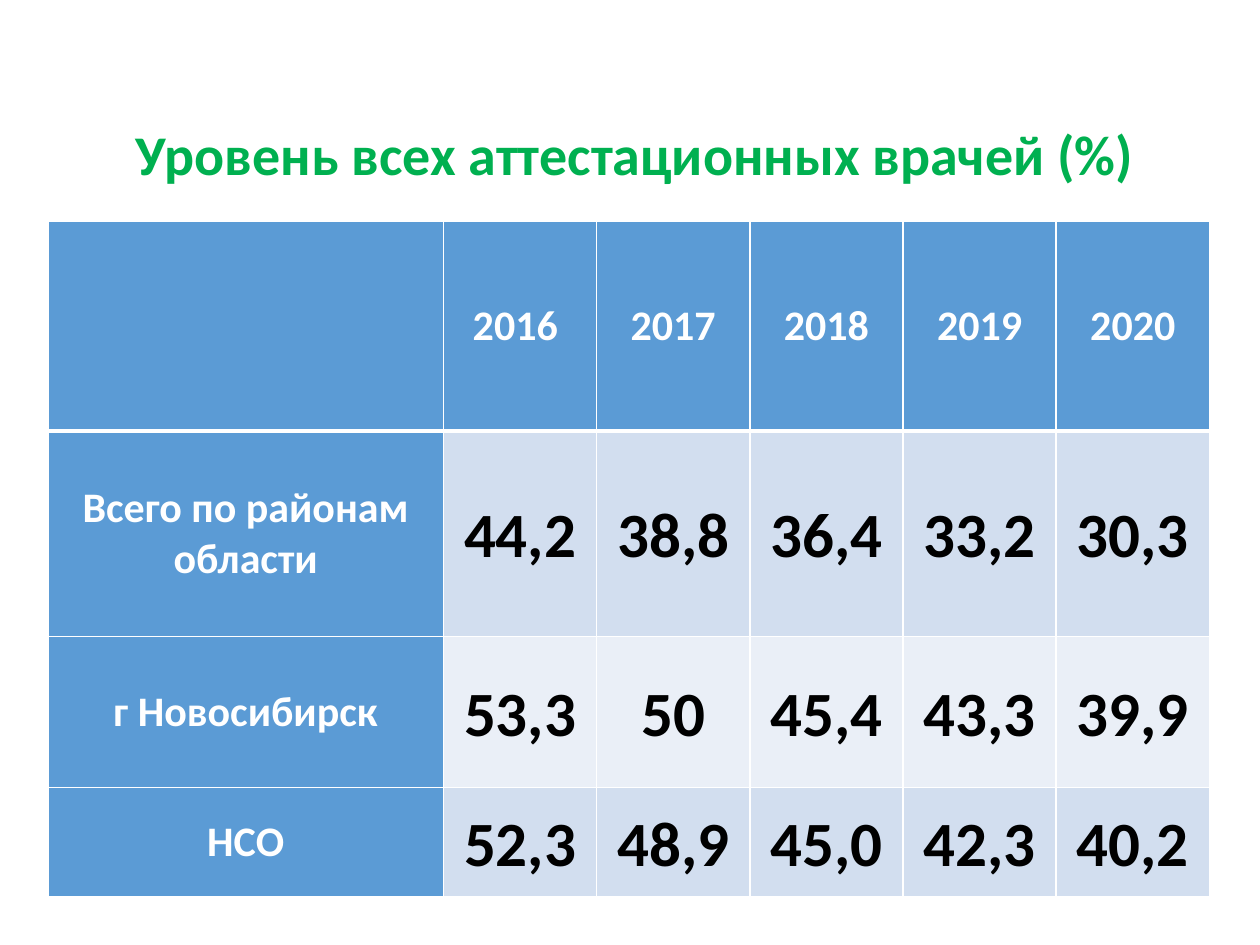
from lxml.etree import SubElement as Sub
from pptx import Presentation
from pptx.dml.color import RGBColor as RGB
from pptx.enum.text import MSO_ANCHOR as Anchor, MSO_AUTO_SIZE as Fit, PP_ALIGN as Align
from pptx.oxml.ns import qn
from pptx.util import Inches, Pt

HUES = {
    "green": "00B050", "blue": "5B9BD5", "white": "FFFFFF", "black": "000000",
    "band": "D2DEEF", "pale": "EAEFF7",
}
COLS, ROWS = 100, 75  # grid over the slide

YEARS = ["", "2016 ", "2017", "2018", "2019", "2020"]
RATES = [
    ["Всего по районам области", "44,2", "38,8", "36,4", "33,2", "30,3"],
    ["г Новосибирск", "53,3", "50", "45,4", "43,3", "39,9"],
    ["НСО", "52,3", "48,9", "45,0", "42,3", "40,2"],
]


def put(frame, text, size=24, hue="white", gap=None):
    """Write one bold, centred paragraph into a text frame."""
    para = frame.paragraphs[0]
    para.alignment = Align.CENTER
    para.line_spacing = gap
    run = para.add_run()
    run.text = text
    font = run.font
    font.name, font.size, font.bold = "Calibri", Pt(size), True
    font.color.rgb = RGB.from_string(HUES[hue])


class Deck:
    def __init__(self):
        self.show = Presentation()
        self.show.slide_width, self.show.slide_height = Inches(10), Inches(7.5)
        self.slide = self.show.slides.add_slide(self.show.slide_layouts[5])

    def wide(self, cols):
        return round(self.show.slide_width * cols / COLS)

    def high(self, rows):
        return round(self.show.slide_height * rows / ROWS)

    def title(self, text, x, y, w, h):
        box = self.slide.shapes.title
        box.left, box.top = self.wide(x), self.high(y)
        box.width, box.height = self.wide(w), self.high(h)
        frame = box.text_frame
        frame.word_wrap, frame.auto_size = True, Fit.NONE
        frame.vertical_anchor = Anchor.TOP
        put(frame, text, size=32, hue="green")

    def edge(self, cell, base):
        """Draw white borders; base is the width of the lower one."""
        props = cell._tc.get_or_add_tcPr()
        sides = {"lnL": 1, "lnR": 1, "lnT": 1, "lnB": base}
        for at, (side, width) in enumerate(sides.items()):
            line = Sub(props, qn("a:" + side), w=str(Pt(width)))
            fill = Sub(line, qn("a:solidFill"))
            Sub(fill, qn("a:srgbClr"), val=HUES["white"])
            props.insert(at, line)  # borders come before the fill

    def cell(self, cell, text, fill, base=1, **style):
        cell.fill.solid()
        cell.fill.fore_color.rgb = RGB.from_string(HUES[fill])
        self.edge(cell, base)
        if text:
            cell.vertical_anchor = Anchor.MIDDLE
            cell.margin_left = cell.margin_right = Inches(0.07)
            cell.margin_top = cell.margin_bottom = 0
            put(cell.text_frame, text, **style)

    def table(self, data, x, y, cols, rows):
        frame = self.slide.shapes.add_table(
            len(rows), len(cols), self.wide(x), self.high(y),
            self.wide(sum(cols)), self.high(sum(rows)))
        grid = frame.table
        for col, width in zip(grid.columns, cols):
            col.width = self.wide(width)
        for row, height in zip(grid.rows, rows):
            row.height = self.high(height)
        for r, line in enumerate(data):
            for c, text in enumerate(line):
                spot = grid.cell(r, c)
                if r == 0 or c == 0:
                    self.cell(spot, text, "blue", base=1 if r else 3)
                else:
                    self.cell(spot, text, "band" if r % 2 else "pale",
                              size=36, hue="black", gap=1.07)


def main():
    deck = Deck()
    # Heading
    deck.title("Уровень всех аттестационных врачей (%)", 3.8, 9, 93.2, 6.4)
    # Rates by area and year
    deck.table([YEARS] + RATES, 3.8, 17.6,
               cols=[31.4] + [12.16] * 5, rows=[16.6, 16.3, 12, 8.7])
    deck.show.save("out.pptx")


if __name__ == "__main__":
    main()
